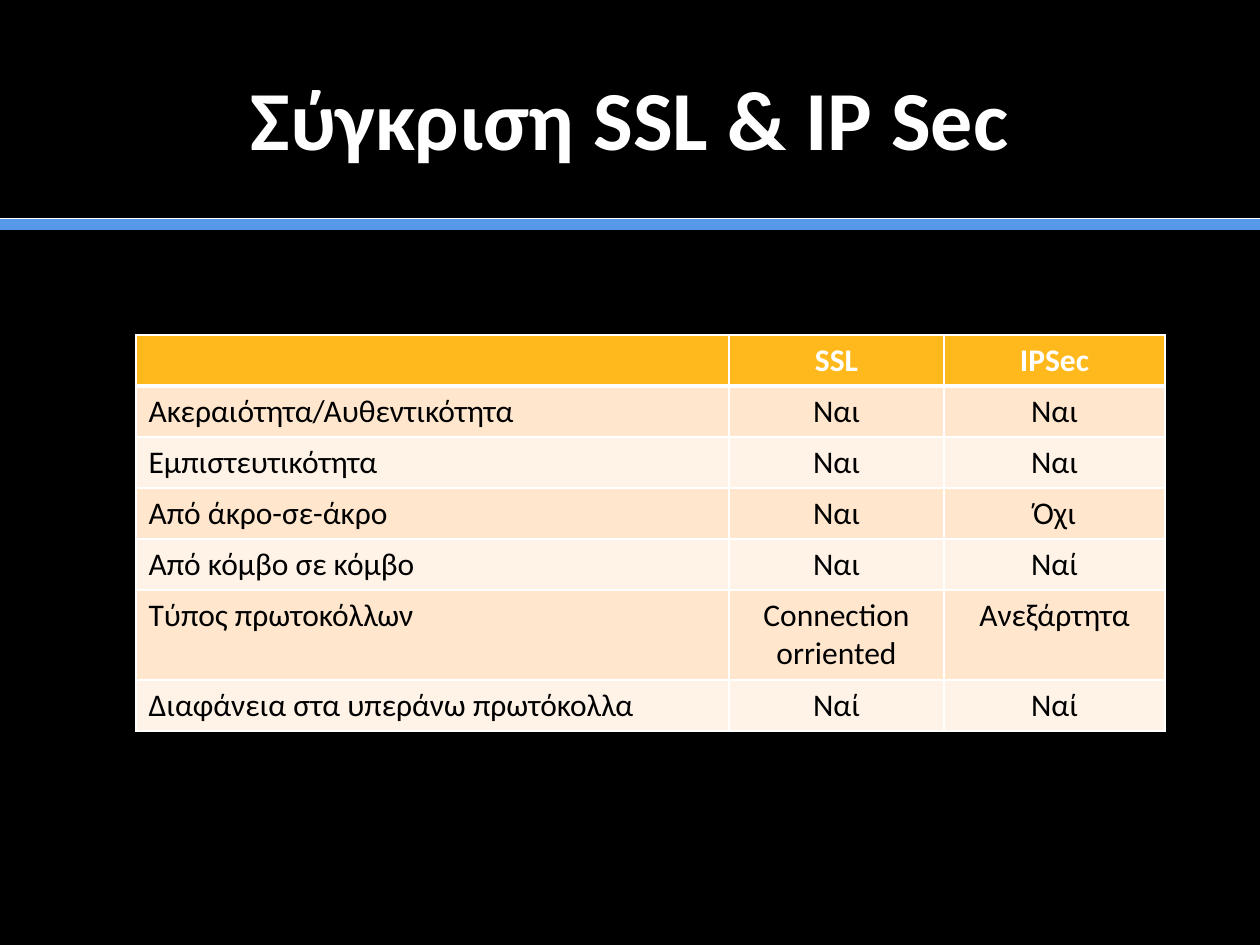
from dataclasses import dataclass

from pptx import Presentation
from pptx.dml.color import RGBColor
from pptx.enum.shapes import MSO_CONNECTOR
from pptx.enum.text import MSO_ANCHOR, PP_ALIGN
from pptx.oxml.ns import qn
from pptx.util import Pt
from lxml.etree import SubElement

PIXELS_PER_INCH = 126


@dataclass(frozen=True)
class Theme:
    font: str = "Calibri"
    background: str = "000000"
    light: str = "FFFFFF"
    dark: str = "000000"
    rule: str = "5799E8"
    header: str = "FFB91D"
    bands: tuple = ("FFE6CD", "FFF3E8")
    title_size: int = 48
    table_size: int = 18


THEME = Theme()
COLUMN_WIDTHS = (593, 215, 221)
ROW_HEIGHTS = (51, 51, 51, 51, 51, 90, 51)
COMPARISON = (
    ("", "SSL", "IPSec"),
    ("Ακεραιότητα/Αυθεντικότητα", "Ναι", "Ναι"),
    ("Εμπιστευτικότητα", "Ναι", "Ναι"),
    ("Από άκρο-σε-άκρο", "Ναι", "Όχι"),
    ("Από κόμβο σε κόμβο", "Ναι", "Ναί"),
    ("Τύπος πρωτοκόλλων", "Connection orriented", "Ανεξάρτητα"),
    ("Διαφάνεια στα υπεράνω πρωτόκολλα", "Ναί", "Ναί"),
)


def px(length):
    return round(length * 914400 / PIXELS_PER_INCH)


def color(value):
    return RGBColor.from_string(value)


def add_run(paragraph, text, size, text_color, bold=False):
    run = paragraph.add_run()
    run.text = text
    run.font.name = THEME.font
    run.font.size = Pt(size)
    run.font.bold = bold
    run.font.color.rgb = color(text_color)


def add_title(slide, left, top, width, height):
    shape = slide.shapes.add_textbox(px(left), px(top), px(width), px(height))
    frame = shape.text_frame
    frame.word_wrap = True
    frame.vertical_anchor = MSO_ANCHOR.MIDDLE
    paragraph = frame.paragraphs[0]
    paragraph.alignment = PP_ALIGN.CENTER
    add_run(paragraph, "Σύγκριση SSL & IP Sec", THEME.title_size, THEME.light, True)


def add_divider(slide, left, top, width):
    """Draw a thin light line with a thick coloured one just below it."""
    for offset, line_color, weight in ((6, THEME.rule, 7), (0, THEME.light, 0.5)):
        line = slide.shapes.add_connector(
            MSO_CONNECTOR.STRAIGHT,
            px(left), px(top + offset), px(left + width), px(top + offset))
        line.line.color.rgb = color(line_color)
        line.line.width = Pt(weight)
        SubElement(line._element.spPr, qn("a:effectLst"))


def set_borders(cell, bottom_weight, top_weight):
    properties = cell._tc.get_or_add_tcPr()
    weights = {"a:lnL": 1, "a:lnR": 1, "a:lnT": top_weight, "a:lnB": bottom_weight}
    for tag, weight in weights.items():
        border = SubElement(properties, qn(tag), w=str(Pt(weight)))
        fill = SubElement(border, qn("a:solidFill"))
        SubElement(fill, qn("a:srgbClr"), val=THEME.light)


def add_comparison_table(slide, left, top):
    table = slide.shapes.add_table(
        len(ROW_HEIGHTS), len(COLUMN_WIDTHS), px(left), px(top),
        px(sum(COLUMN_WIDTHS)), px(sum(ROW_HEIGHTS))).table
    for column, width in zip(table.columns, COLUMN_WIDTHS):
        column.width = px(width)
    for row_index, (texts, height) in enumerate(zip(COMPARISON, ROW_HEIGHTS)):
        table.rows[row_index].height = px(height)
        is_header = row_index == 0
        fill_color = THEME.header if is_header else THEME.bands[(row_index - 1) % 2]
        for column_index, text in enumerate(texts):
            cell = table.cell(row_index, column_index)
            set_borders(cell, 3 if is_header else 1, 3 if row_index == 1 else 1)
            cell.fill.solid()
            cell.fill.fore_color.rgb = color(fill_color)
            paragraph = cell.text_frame.paragraphs[0]
            paragraph.alignment = PP_ALIGN.CENTER if column_index else PP_ALIGN.LEFT
            if text:
                add_run(paragraph, text, THEME.table_size,
                        THEME.light if is_header else THEME.dark, is_header)


def main():
    presentation = Presentation()
    presentation.slide_width, presentation.slide_height = px(1260), px(945)
    slide = presentation.slides.add_slide(presentation.slide_layouts[6])
    slide.background.fill.solid()
    slide.background.fill.fore_color.rgb = color(THEME.background)
    add_divider(slide, 0, 218, 1260)
    add_title(slide, 63, 38, 1134, 158)
    add_comparison_table(slide, 136, 335)
    presentation.save("out.pptx")


if __name__ == "__main__":
    main()
